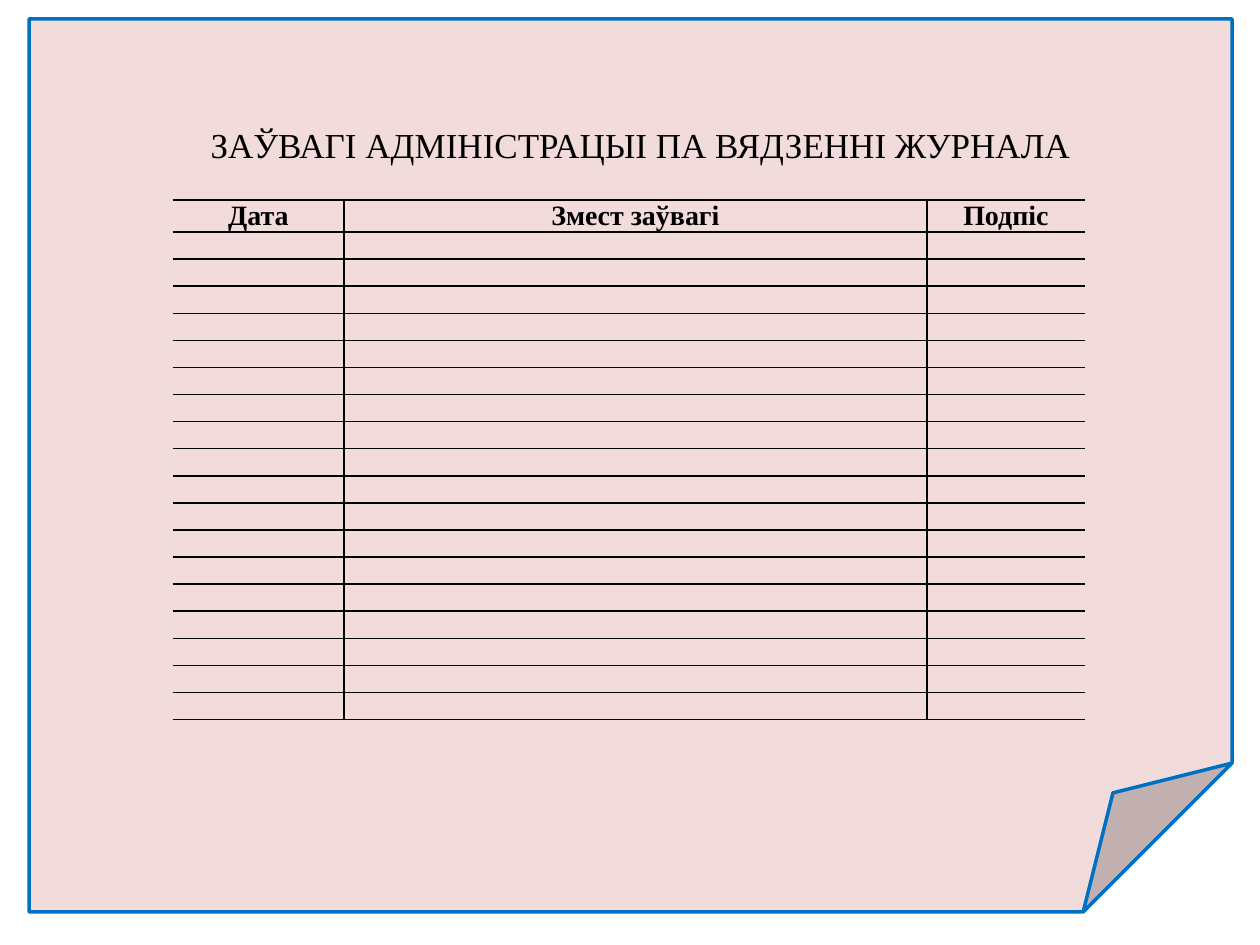
from dataclasses import dataclass

from lxml.etree import SubElement
from pptx import Presentation
from pptx.dml.color import RGBColor
from pptx.enum.shapes import MSO_SHAPE
from pptx.enum.text import MSO_ANCHOR, MSO_AUTO_SIZE, PP_ALIGN
from pptx.oxml.ns import qn
from pptx.util import Emu, Inches, Pt

PX_PER_INCH = 126
TITLE = "ЗАЎВАГІ АДМІНІСТРАЦЫІ ПА ВЯДЗЕННІ ЖУРНАЛА"
HEADINGS = ("Дата", "Змест заўвагі", "Подпіс")
COLUMN_WIDTHS = (171, 583, 158)
HEADER_HEIGHT = 32
ENTRY_ROWS = 18


@dataclass(frozen=True)
class Theme:
    font: str = "Times New Roman"
    paper: RGBColor = RGBColor(0xF2, 0xDC, 0xDB)
    edge: RGBColor = RGBColor(0x00, 0x70, 0xC0)
    ink: RGBColor = RGBColor(0x00, 0x00, 0x00)
    title_size: int = 20
    heading_size: int = 16
    entry_size: int = 12
    edge_width: int = 2
    rule_width: int = 1


THEME = Theme()


def px(length):
    return Emu(round(length * Inches(1) / PX_PER_INCH))


def add_run(paragraph, text, size, bold=False):
    run = paragraph.add_run()
    run.text = text
    run.font.name = THEME.font
    run.font.size = Pt(size)
    run.font.bold = bold
    run.font.color.rgb = THEME.ink


def add_page(slide, box):
    page = slide.shapes.add_shape(MSO_SHAPE.FOLDED_CORNER, *map(px, box))
    page.shadow.inherit = False
    page.fill.solid()
    page.fill.fore_color.rgb = THEME.paper
    page.line.color.rgb = THEME.edge
    page.line.width = Pt(THEME.edge_width)


def place_title(slide, box):
    """Fill the title placeholder and bring it in front of the page."""
    title = slide.shapes.title
    title.left, title.top, title.width, title.height = map(px, box)
    frame = title.text_frame
    frame.word_wrap = False
    frame.auto_size = MSO_AUTO_SIZE.NONE
    frame.vertical_anchor = MSO_ANCHOR.TOP
    frame.margin_top = px(10)
    paragraph = frame.paragraphs[0]
    paragraph.alignment = PP_ALIGN.LEFT
    add_run(paragraph, TITLE, THEME.title_size)
    slide.shapes._spTree.append(title._element)


def rule_cell(cell, open_sides):
    """Draw the cell's borders, leaving the sides named in open_sides bare."""
    properties = cell._tc.get_or_add_tcPr()
    for side in "LRTB":
        border = SubElement(properties, qn(f"a:ln{side}"), w=str(Pt(THEME.rule_width)))
        if side in open_sides:
            SubElement(border, qn("a:noFill"))
        else:
            fill = SubElement(border, qn("a:solidFill"))
            SubElement(fill, qn("a:srgbClr"), val=str(THEME.ink))
    cell.fill.background()


def add_remarks_table(slide, box):
    height = box[3]
    table = slide.shapes.add_table(ENTRY_ROWS + 1, len(HEADINGS), *map(px, box)).table
    table.first_row = table.horz_banding = False
    for column, width in zip(table.columns, COLUMN_WIDTHS):
        column.width = px(width)
    for index, row in enumerate(table.rows):
        is_header = index == 0
        row.height = px(HEADER_HEIGHT if is_header else (height - HEADER_HEIGHT) / ENTRY_ROWS)
        for cell, heading, open_sides in zip(row.cells, HEADINGS, ("L", "", "R")):
            cell.margin_left = cell.margin_right = px(9)
            cell.margin_top = cell.margin_bottom = 0
            rule_cell(cell, open_sides)
            paragraph = cell.text_frame.paragraphs[0]
            paragraph.alignment = PP_ALIGN.CENTER
            if is_header:
                add_run(paragraph, heading, THEME.heading_size, bold=True)
            else:
                SubElement(paragraph._p, qn("a:endParaRPr"), sz=str(THEME.entry_size * 100))


def main():
    presentation = Presentation()
    presentation.slide_width, presentation.slide_height = Inches(10), Inches(7.5)
    slide = presentation.slides.add_slide(presentation.slide_layouts[5])
    add_page(slide, (29, 19, 1203, 893))
    add_remarks_table(slide, (173, 200, sum(COLUMN_WIDTHS), 520))
    place_title(slide, (198, 113, 893, 97))
    presentation.save("out.pptx")


if __name__ == "__main__":
    main()
